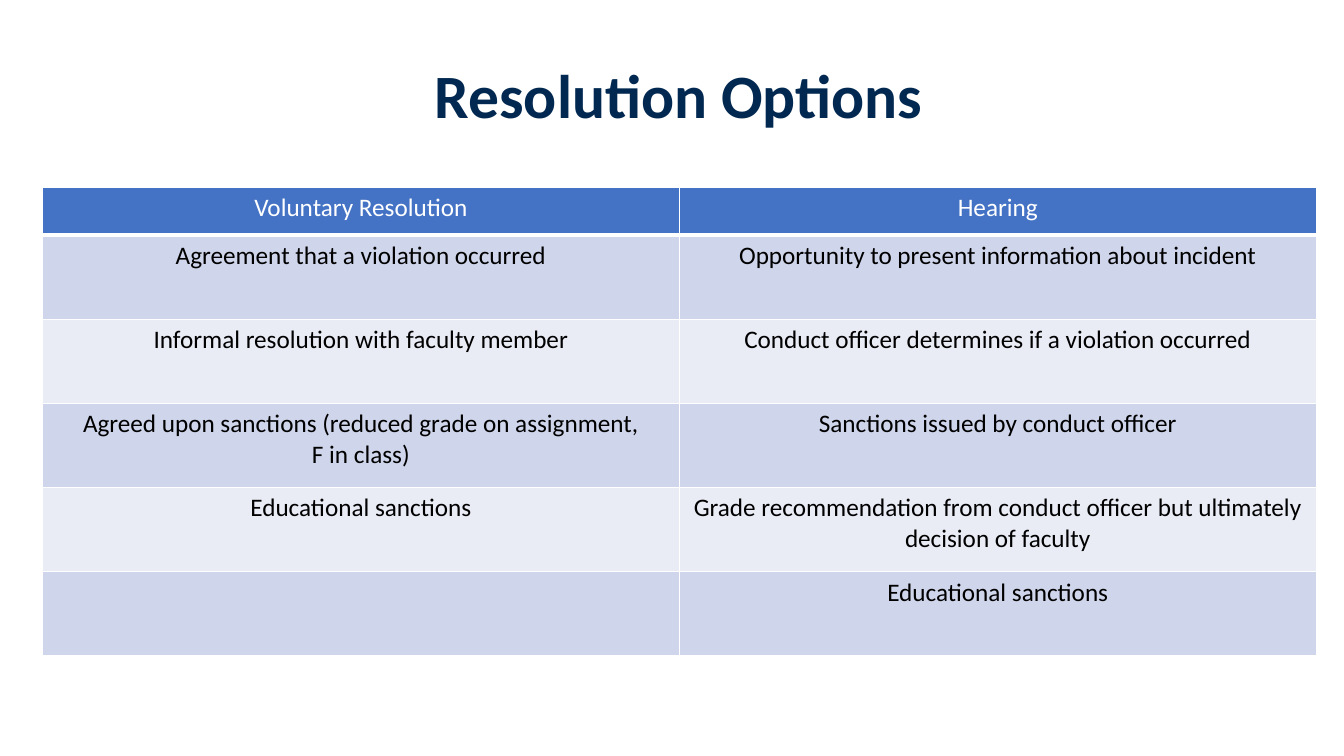
from dataclasses import dataclass

from lxml.etree import SubElement
from pptx import Presentation
from pptx.dml.color import RGBColor as Rgb
from pptx.enum.text import MSO_ANCHOR as Anchor, PP_ALIGN as Align
from pptx.oxml.ns import qn
from pptx.util import Cm, Pt


@dataclass(frozen=True)
class Theme:
    font: str = "Calibri"
    title_size: int = 44
    table_size: int = 18
    navy: str = "002850"
    header: str = "4472C4"
    bands: tuple = ("CFD5EA", "E9EBF5")
    white: str = "FFFFFF"
    black: str = "000000"
    rule: int = 1
    header_rule: int = 3


THEME = Theme()

OPTIONS = [
    ("Voluntary Resolution", "Hearing"),
    ("Agreement that a violation occurred",
     "Opportunity to present information about incident"),
    ("Informal resolution with faculty member",
     "Conduct officer determines if a violation occurred"),
    ("Agreed upon sanctions (reduced grade on assignment,\nF in class)",
     "Sanctions issued by conduct officer"),
    ("Educational sanctions",
     "Grade recommendation from conduct officer but ultimately decision of faculty"),
    ("", "Educational sanctions"),
]


def write(frame, text, *, size, color, bold=False, spacing=None):
    frame.word_wrap = True
    frame.text = text
    for paragraph in frame.paragraphs:
        paragraph.alignment = Align.CENTER
        if spacing:
            paragraph.line_spacing = spacing
        for font in [paragraph.font] + [run.font for run in paragraph.runs]:
            font.name = THEME.font
            font.size = Pt(size)
            font.bold = bold
            font.color.rgb = Rgb.from_string(color)


def add_title(slide, text):
    title = slide.shapes.add_textbox(Cm(3.18), Cm(1.14), Cm(27.86), Cm(2.69))
    title.text_frame.vertical_anchor = Anchor.MIDDLE
    write(title.text_frame, text, size=THEME.title_size, color=THEME.navy,
          bold=True, spacing=0.9)


def add_borders(cell, bottom):
    properties = cell._tc.get_or_add_tcPr()
    widths = {"lnL": THEME.rule, "lnR": THEME.rule, "lnT": THEME.rule, "lnB": bottom}
    for side, width in widths.items():
        line = SubElement(properties, qn(f"a:{side}"), w=str(Pt(width)))
        fill = SubElement(line, qn("a:solidFill"))
        SubElement(fill, qn("a:srgbClr"), val=THEME.white)


def format_cell(cell, text, *, fill, color, bottom):
    cell.margin_left = cell.margin_right = Cm(0.3)
    cell.margin_top = cell.margin_bottom = Cm(0.13)
    add_borders(cell, bottom)
    cell.fill.solid()
    cell.fill.fore_color.rgb = Rgb.from_string(fill)
    write(cell.text_frame, text, size=THEME.table_size, color=color)


def add_options_table(slide, options):
    column_width, header_height, row_height = Cm(16.05), Cm(1.21), Cm(2.12)
    row_count, column_count = len(options), len(options[0])
    table = slide.shapes.add_table(
        row_count, column_count, Cm(1.07), Cm(4.72), column_width * column_count,
        header_height + row_height * (row_count - 1)).table
    for column in table.columns:
        column.width = column_width
    for index, texts in enumerate(options):
        is_header = index == 0
        table.rows[index].height = header_height if is_header else row_height
        for cell, text in zip(table.rows[index].cells, texts):
            format_cell(
                cell, text,
                fill=THEME.header if is_header else THEME.bands[(index - 1) % 2],
                color=THEME.white if is_header else THEME.black,
                bottom=THEME.header_rule if is_header else THEME.rule)


def main():
    deck = Presentation()
    deck.slide_width, deck.slide_height = Cm(33.87), Cm(19.05)
    slide = deck.slides.add_slide(deck.slide_layouts[6])
    add_options_table(slide, OPTIONS)
    add_title(slide, "Resolution Options")
    deck.save("out.pptx")


if __name__ == "__main__":
    main()
